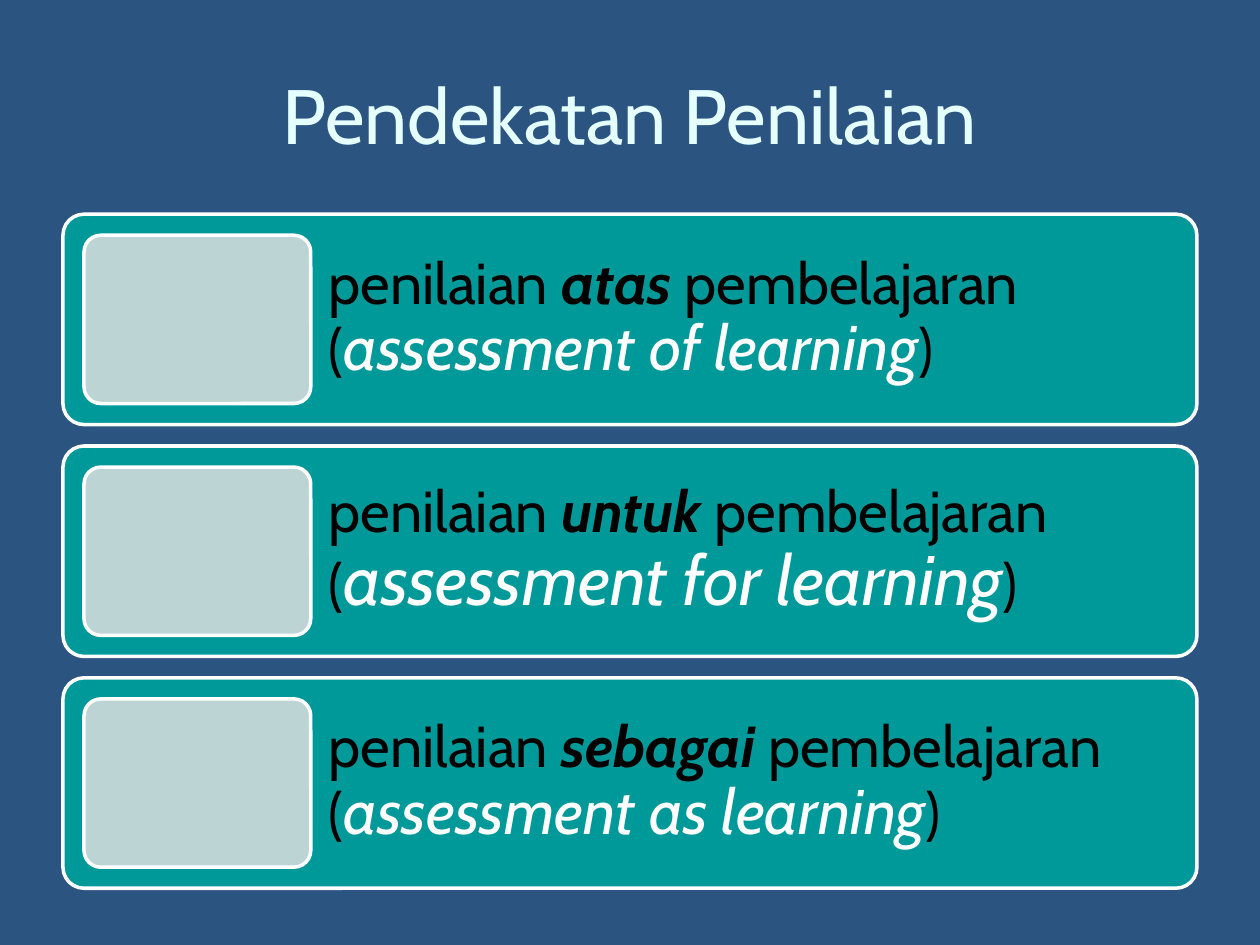
from dataclasses import dataclass

from pptx import Presentation
from pptx.dml.color import RGBColor
from pptx.enum.shapes import MSO_SHAPE
from pptx.enum.text import MSO_ANCHOR, PP_ALIGN
from pptx.util import Inches, Pt

ROUNDED = MSO_SHAPE.ROUNDED_RECTANGLE
MIDDLE = MSO_ANCHOR.MIDDLE
LEFT, CENTER = PP_ALIGN.LEFT, PP_ALIGN.CENTER


@dataclass(frozen=True)
class Theme:
    font: str = "Cabin"
    background: str = "2B5481"
    title: str = "E5FFFF"
    card: str = "009999"
    tile: str = "BDD4D4"
    outline: str = "FFFFFF"
    text: str = "000000"
    accent: str = "FFFFFF"
    title_size: int = 44
    body_size: int = 33
    outline_width: int = 2


@dataclass(frozen=True)
class Area:
    left: float
    top: float
    width: float
    height: float

    def lengths(self) -> tuple:
        return tuple(Inches(v) for v in (self.left, self.top, self.width, self.height))


@dataclass(frozen=True)
class Span:
    text: str
    size: int
    color: str
    bold: bool = False
    italic: bool = False


@dataclass(frozen=True)
class Approach:
    keyword: str
    english: str
    english_size: int


THEME = Theme()
PAGE_WIDTH, PAGE_HEIGHT = 10, 7.5

# Grid: equal cards stacked inside the page margin
MARGIN = PAGE_WIDTH * 0.05
CONTENT_WIDTH = PAGE_WIDTH - 2 * MARGIN
FIRST_ROW, ROW_STEP, CARD_HEIGHT = 1.7, 1.84, 1.67
PADDING = CARD_HEIGHT / 10
TILE_WIDTH = CONTENT_WIDTH / 5
TEXT_INSET = 0.14

APPROACHES = (
    Approach("atas", "assessment of learning", 36),
    Approach("untuk", "assessment for learning", 40),
    Approach("sebagai", "assessment as learning", 36),
)


def add_panel(page, area: Area, color: str) -> None:
    panel = page.shapes.add_shape(ROUNDED, *area.lengths())
    panel.adjustments[0] = 0.1
    panel.shadow.inherit = False
    panel.fill.solid()
    panel.fill.fore_color.rgb = RGBColor.from_string(color)
    panel.line.color.rgb = RGBColor.from_string(THEME.outline)
    panel.line.width = Pt(THEME.outline_width)


def add_text(page, area: Area, spans: list[Span], align=LEFT,
             inset: float = 0.1, spacing: float = 1.0) -> None:
    frame = page.shapes.add_textbox(*area.lengths()).text_frame
    frame_format = {"word_wrap": True, "vertical_anchor": MIDDLE}
    frame_format |= {f"margin_{side}": Inches(inset)
                     for side in ("left", "top", "right", "bottom")}
    for name, value in frame_format.items():
        setattr(frame, name, value)
    para = frame.paragraphs[0]
    para.alignment = align
    para.line_spacing = spacing
    for span in spans:
        run = para.add_run()
        run.text = span.text
        run_format = {"name": THEME.font, "size": Pt(span.size),
                      "bold": span.bold, "italic": span.italic}
        for name, value in run_format.items():
            setattr(run.font, name, value)
        run.font.color.rgb = RGBColor.from_string(span.color)


def add_approach(page, row: int, approach: Approach) -> None:
    top = FIRST_ROW + row * ROW_STEP
    tile_left = MARGIN + PADDING
    text_left = tile_left + TILE_WIDTH
    text_width = MARGIN + CONTENT_WIDTH - text_left
    add_panel(page, Area(MARGIN, top, CONTENT_WIDTH, CARD_HEIGHT), THEME.card)
    size, color = THEME.body_size, THEME.text
    spans = [
        Span("penilaian ", size, color),
        Span(approach.keyword, size, color, bold=True, italic=True),
        Span(" pembelajaran (", size, color),
        Span(approach.english, approach.english_size, THEME.accent, italic=True),
        Span(")", size, color),
    ]
    add_text(page, Area(text_left, top, text_width, CARD_HEIGHT), spans,
             inset=TEXT_INSET, spacing=0.9)
    add_panel(page, Area(tile_left, top + PADDING, TILE_WIDTH,
                         CARD_HEIGHT - 2 * PADDING), THEME.tile)


def main() -> None:
    deck = Presentation()
    deck.slide_width, deck.slide_height = Inches(PAGE_WIDTH), Inches(PAGE_HEIGHT)
    page = deck.slides.add_slide(deck.slide_layouts[6])
    page.background.fill.solid()
    page.background.fill.fore_color.rgb = RGBColor.from_string(THEME.background)

    # Title
    add_text(page, Area(MARGIN, 0.42, CONTENT_WIDTH, 0.97),
             [Span("Pendekatan Penilaian", THEME.title_size, THEME.title)], CENTER)

    # Assessment approaches
    for row, approach in enumerate(APPROACHES):
        add_approach(page, row, approach)

    deck.save("out.pptx")


if __name__ == "__main__":
    main()
